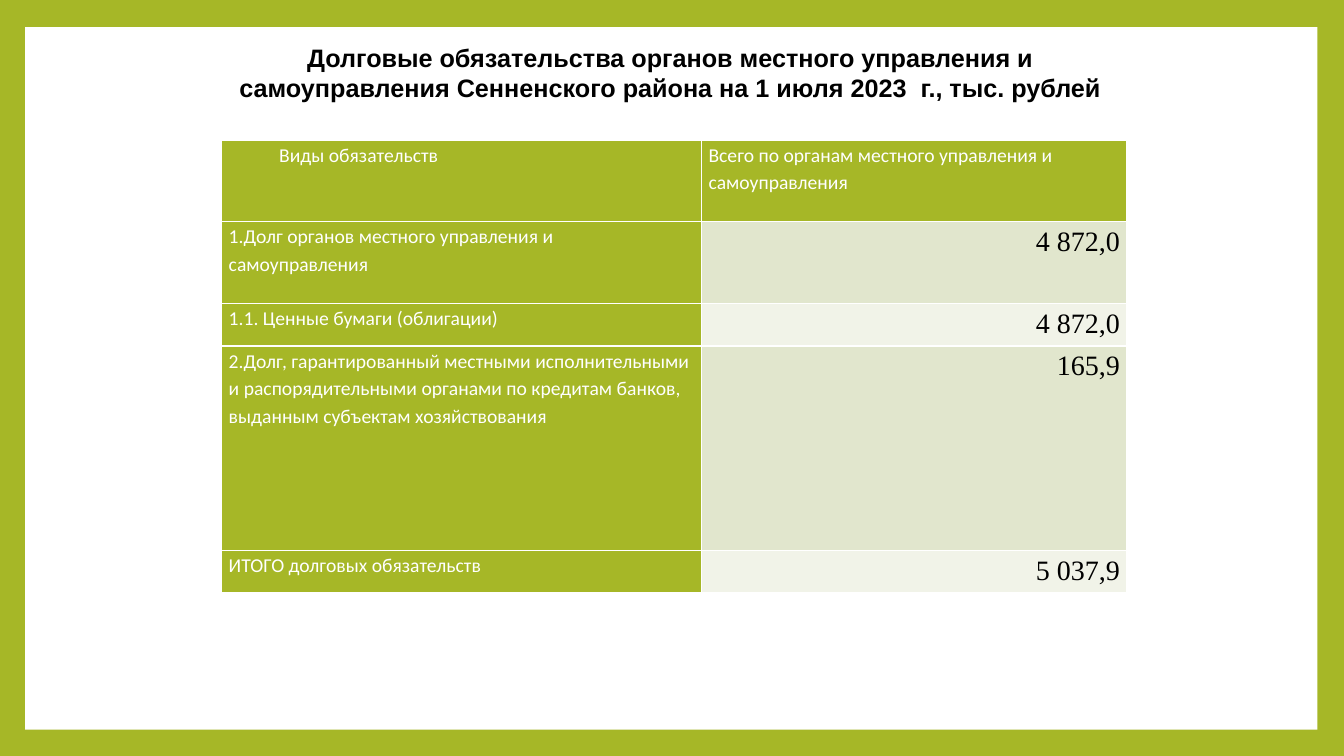
"""Builds the slide with the debt obligations table of the Senno district."""
from dataclasses import dataclass

from lxml.etree import SubElement
from pptx import Presentation
from pptx.dml.color import RGBColor
from pptx.dml.fill import FillFormat
from pptx.enum.shapes import MSO_SHAPE
from pptx.enum.text import MSO_ANCHOR, MSO_AUTO_SIZE, PP_ALIGN
from pptx.oxml import parse_xml
from pptx.oxml.ns import nsdecls, qn
from pptx.slide import Slide
from pptx.table import _Cell as Cell
from pptx.text.text import _Paragraph as Paragraph
from pptx.util import Pt

GREEN, WHITE, BLACK = "A6B727", "FFFFFF", "000000"
BANDS = ("E1E6CD", "F1F3E8")
TITLE = (
    "Долговые обязательства органов местного управления и "
    "самоуправления Сенненского района на 1 июля 2023  г., тыс. рублей"
)
COLUMN_WIDTHS = (342.72, 303.84)


@dataclass(frozen=True)
class TextStyle:
    font: str
    size: float
    color: str
    align: PP_ALIGN = PP_ALIGN.LEFT
    bold: bool = False


@dataclass(frozen=True)
class DebtRow:
    label: str
    value: str
    height: float


TITLE_STYLE = TextStyle("Arial", 18, BLACK, PP_ALIGN.CENTER, True)
LABEL_STYLE = TextStyle("Calibri", 14, WHITE)
VALUE_STYLE = TextStyle("Times New Roman", 20, BLACK, PP_ALIGN.RIGHT)

ROWS = (
    DebtRow("Виды обязательств", "Всего по органам местного управления и самоуправления", 58.4),
    DebtRow("1.Долг органов местного управления и самоуправления", "4 872,0", 58.4),
    DebtRow("1.1. Ценные бумаги (облигации)", "4 872,0", 30.4),
    DebtRow(
        "2.Долг, гарантированный местными исполнительными и распорядительными "
        "органами по кредитам банков, выданным субъектам хозяйствования",
        "165,9",
        146,
    ),
    DebtRow("ИТОГО долговых обязательств", "5 037,9", 30.4),
)


def paint(fill: FillFormat, color: str) -> None:
    fill.solid()
    fill.fore_color.rgb = RGBColor.from_string(color)


def format_paragraph(paragraph: Paragraph, style: TextStyle) -> None:
    paragraph.alignment = style.align
    for run in paragraph.runs:
        run.font.name = style.font
        run.font.size = Pt(style.size)
        run.font.bold = style.bold
        run.font.color.rgb = RGBColor.from_string(style.color)


def add_borders(cell: Cell) -> None:
    properties = cell._tc.get_or_add_tcPr()
    for position, side in enumerate("LRTB"):
        line = parse_xml(f'<a:ln{side} {nsdecls("a")} w="{Pt(1)}"/>')
        fill = SubElement(line, qn("a:solidFill"))
        SubElement(fill, qn("a:srgbClr"), val=WHITE)
        properties.insert(position, line)


def fill_cell(cell: Cell, text: str, style: TextStyle, color: str) -> None:
    cell.margin_left = cell.margin_right = Pt(5)
    cell.margin_top = cell.margin_bottom = Pt(0)
    paint(cell.fill, color)
    add_borders(cell)
    cell.text_frame.text = text
    paragraph = cell.text_frame.paragraphs[0]
    paragraph.line_spacing = 1.15
    format_paragraph(paragraph, style)


def add_panel(slide: Slide) -> None:
    panel = slide.shapes.add_shape(
        MSO_SHAPE.RECTANGLE, Pt(18), Pt(19.4), Pt(923), Pt(501.8)
    )
    panel.shadow.inherit = False
    paint(panel.fill, WHITE)
    panel.line.fill.background()


def add_debt_table(slide: Slide) -> None:
    frame = slide.shapes.add_table(
        len(ROWS), len(COLUMN_WIDTHS), Pt(158.4), Pt(100),
        Pt(sum(COLUMN_WIDTHS)), Pt(sum(row.height for row in ROWS)),
    )
    table = frame.table
    for column, width in zip(table.columns, COLUMN_WIDTHS):
        column.width = Pt(width)
    for index, row in enumerate(ROWS):
        table.rows[index].height = Pt(row.height)
        is_header = index == 0
        value_style = LABEL_STYLE if is_header else VALUE_STYLE
        value_color = GREEN if is_header else BANDS[(index - 1) % 2]
        fill_cell(table.cell(index, 0), row.label, LABEL_STYLE, GREEN)
        fill_cell(table.cell(index, 1), row.value, value_style, value_color)
    header = table.cell(0, 0).text_frame.paragraphs[0]
    header._p.get_or_add_pPr().set("marL", str(Pt(36)))


def place_title(slide: Slide) -> None:
    title = slide.shapes.title
    title.left, title.top, title.width, title.height = Pt(152.6), Pt(26), Pt(652.3), Pt(51)
    title.text_frame.text = TITLE
    title.text_frame.word_wrap = True
    title.text_frame.auto_size = MSO_AUTO_SIZE.NONE
    title.text_frame.vertical_anchor = MSO_ANCHOR.MIDDLE
    format_paragraph(title.text_frame.paragraphs[0], TITLE_STYLE)
    slide.shapes[-1].element.addnext(title.element)


def main() -> None:
    presentation = Presentation()
    presentation.slide_width, presentation.slide_height = Pt(960), Pt(540)
    slide = presentation.slides.add_slide(presentation.slide_layouts[5])
    paint(slide.background.fill, GREEN)
    add_panel(slide)
    add_debt_table(slide)
    place_title(slide)
    presentation.save("out.pptx")


if __name__ == "__main__":
    main()
